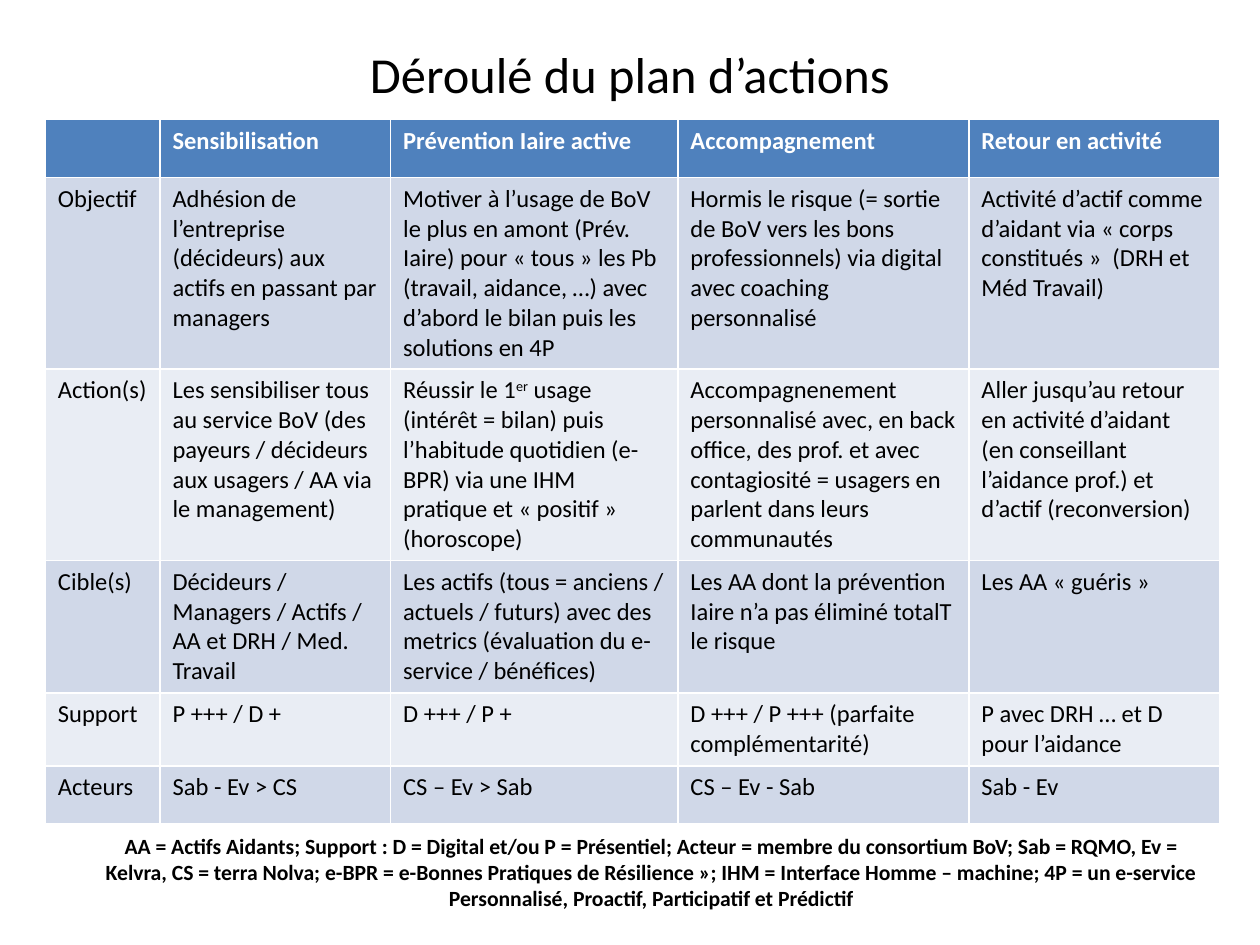
import pptx
import pptx.dml.color
import pptx.enum.text
import pptx.util

Inches, Pt = pptx.util.Inches, pptx.util.Pt

COLORS = {"text": "000000", "header_text": "FFFFFF", "header": "4F81BD",
          "band_dark": "D0D8E8", "band_light": "E9EDF4"}
FONT = "Calibri"

TITLE = "Déroulé du plan d’actions"
NOTE = ("AA = Actifs Aidants; Support : D = Digital et/ou P = Présentiel; "
        "Acteur = membre du consortium BoV; Sab = RQMO, Ev = Kelvra, CS = terra Nolva; "
        "e-BPR = e-Bonnes Pratiques de Résilience »; IHM = Interface Homme – machine; "
        "4P = un e-service Personnalisé, Proactif, Participatif et Prédictif")
ROWS = [
    ["", "Sensibilisation", "Prévention Iaire active", "Accompagnement",
     "Retour en activité"],
    ["Objectif",
     "Adhésion de l’entreprise (décideurs) aux actifs en passant par managers",
     "Motiver à l’usage de BoV le plus en amont (Prév. Iaire) pour « tous » les Pb "
     "(travail, aidance, …) avec d’abord le bilan puis les solutions en 4P",
     "Hormis le risque (= sortie de BoV vers les bons professionnels) via digital "
     "avec coaching personnalisé",
     "Activité d’actif comme d’aidant via « corps constitués »  (DRH et Méd Travail)"],
    ["Action(s)",
     "Les sensibiliser tous au service BoV (des payeurs / décideurs aux usagers / AA "
     "via le management)",
     ("Réussir le 1", "er",
      " usage (intérêt = bilan) puis l’habitude quotidien (e-BPR) via une IHM pratique "
      "et « positif » (horoscope)"),
     "Accompagnenement personnalisé avec, en back office, des prof. et avec "
     "contagiosité = usagers en parlent dans leurs communautés",
     "Aller jusqu’au retour en activité d’aidant (en conseillant l’aidance prof.) "
     "et d’actif (reconversion)"],
    ["Cible(s)",
     "Décideurs / Managers / Actifs / AA et DRH / Med. Travail",
     "Les actifs (tous = anciens / actuels / futurs) avec des metrics "
     "(évaluation du e-service / bénéfices)",
     "Les AA dont la prévention Iaire n’a pas éliminé totalT le risque",
     "Les AA « guéris »"],
    ["Support", "P +++ / D +", "D +++ / P +",
     "D +++ / P +++ (parfaite complémentarité)", "P avec DRH … et D pour l’aidance"],
    ["Acteurs", "Sab - Ev > CS", "CS – Ev > Sab", "CS – Ev - Sab", "Sab - Ev"],
]
COL_WIDTHS = [0.91, 1.83, 2.28, 2.31, 1.99]
ROW_HEIGHTS = [0.46, 1.52, 1.52, 1.05, 0.58, 0.46]


def rgb(name):
    return pptx.dml.color.RGBColor.from_string(COLORS[name])


def write(p, parts, size, color="text", bold=False):
    p.font.name, p.font.size, p.font.bold = FONT, Pt(size), bold
    p.font.color.rgb = rgb(color)
    for i, part in enumerate(parts):
        r = p.add_run()
        r.text = part
        if i % 2:
            r._r.get_or_add_rPr().set("baseline", "30000")


def add_centred_text(slide, box, text, size, bold=False):
    tf = slide.shapes.add_textbox(*map(Inches, box)).text_frame
    tf.word_wrap = True
    tf.vertical_anchor = pptx.enum.text.MSO_ANCHOR.MIDDLE
    p = tf.paragraphs[0]
    p.alignment = pptx.enum.text.PP_ALIGN.CENTER
    write(p, [text], size, bold=bold)


def add_plan(slide):
    table = slide.shapes.add_table(
        len(ROWS), len(COL_WIDTHS), Inches(0.36), Inches(0.95),
        Inches(sum(COL_WIDTHS)), Inches(sum(ROW_HEIGHTS))).table
    for column, width in zip(table.columns, COL_WIDTHS):
        column.width = Inches(width)
    for i, (row, height, texts) in enumerate(zip(table.rows, ROW_HEIGHTS, ROWS)):
        row.height = Inches(height)
        header = i == 0
        fill = "header" if header else ("band_light", "band_dark")[i % 2]
        for cell, text in zip(row.cells, texts):
            cell.fill.solid()
            cell.fill.fore_color.rgb = rgb(fill)
            parts = [text] if isinstance(text, str) else text
            write(cell.text_frame.paragraphs[0], parts, 14,
                  "header_text" if header else "text", header)


def main():
    prs = pptx.Presentation()
    prs.slide_width, prs.slide_height = Inches(10), Inches(7.5)
    slide = prs.slides.add_slide(prs.slide_layouts[6])
    add_centred_text(slide, (0.5, 0.3, 9, 0.56), TITLE, 28.8)
    add_plan(slide)
    add_centred_text(slide, (0.67, 6.62, 9, 0.59), NOTE, 12.4, bold=True)
    prs.save("out.pptx")


if __name__ == "__main__":
    main()
